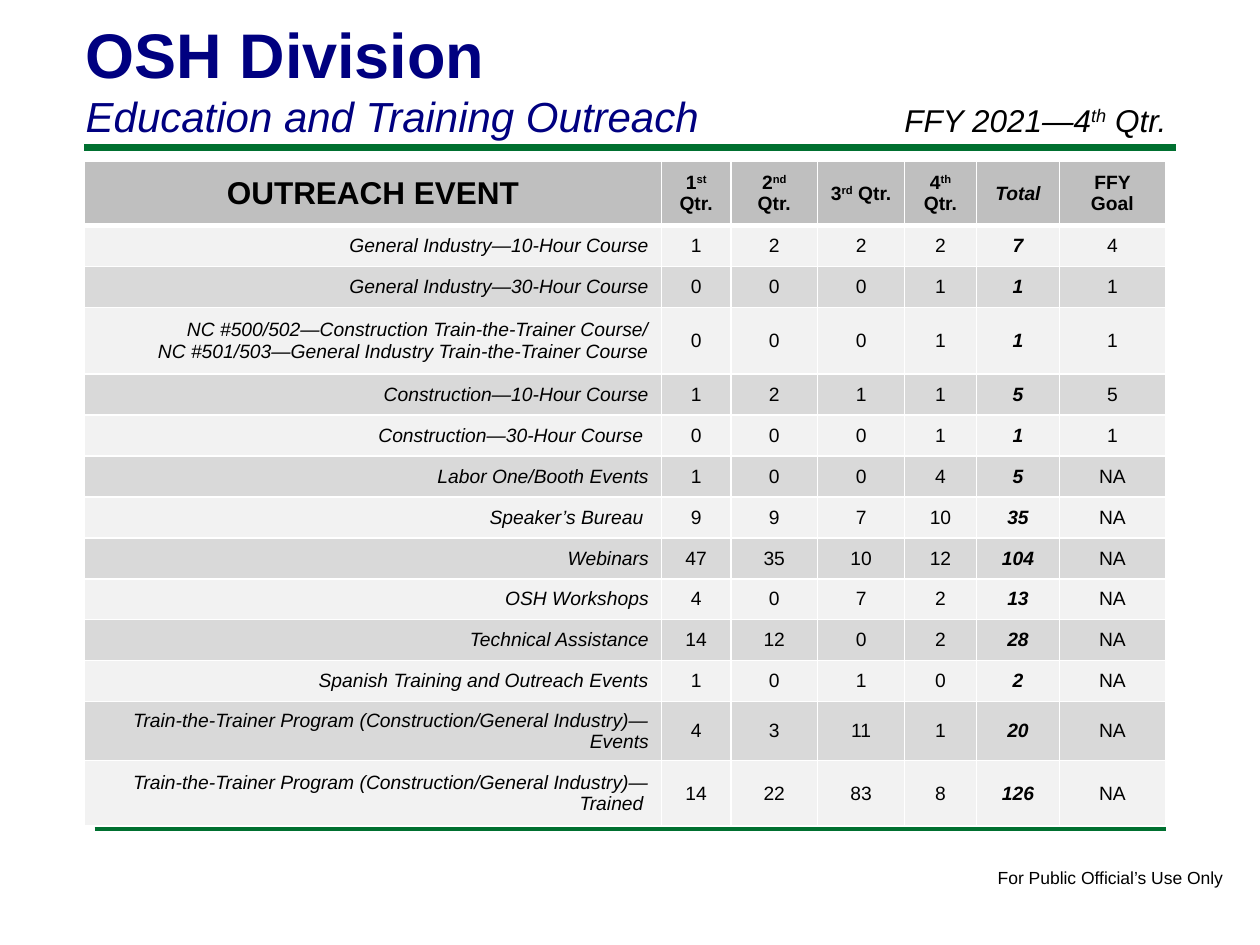
from lxml import etree
from pptx import Presentation, util as u
from pptx.dml.color import RGBColor
from pptx.enum import shapes, text
from pptx.oxml import ns

COLORS = {"navy": "000080", "green": "007030", "black": "000000", "white": "FFFFFF",
          "header": "BFBFBF", "light": "F2F2F2", "dark": "D9D9D9"}


def add_run(paragraph, words, size, color="black", bold=False, italic=False, raised=False):
    run = paragraph.add_run()
    run.text = words
    font = run.font
    font.name, font.size, font.bold, font.italic = "Arial", u.Pt(size), bold, italic
    font.color.rgb = RGBColor.from_string(COLORS[color])
    if raised:
        run._r.get_or_add_rPr().set("baseline", "30000")


def set_borders(cell, widths):
    properties = cell._tc.get_or_add_tcPr()
    for position, (side, width) in enumerate(widths.items()):
        line = etree.Element(ns.qn(f"a:ln{side}"), w=str(u.Pt(width)))
        fill = etree.SubElement(line, ns.qn("a:solidFill"))
        etree.SubElement(fill, ns.qn("a:srgbClr"), val=COLORS["white"])
        properties.insert(position, line)


presentation = Presentation()
presentation.slide_width, presentation.slide_height = u.Inches(10), u.Inches(7.5)
slide = presentation.slides.add_slide(presentation.slide_layouts[5])

for left, right, y, width in [(0.67, 9.33, 1.17, 4), (0.75, 9.25, 6.58, 2)]:
    rule = slide.shapes.add_connector(shapes.MSO_CONNECTOR.STRAIGHT, u.Inches(left),
                                      u.Inches(y), u.Inches(right), u.Inches(y))
    rule.line.color.rgb = RGBColor.from_string(COLORS["green"])
    rule.line.width = u.Pt(width)
    etree.SubElement(rule._element.spPr, ns.qn("a:effectLst"))

title = slide.shapes.title
title.left, title.top = u.Inches(0.58), u.Inches(0.06)
title.width, title.height = u.Inches(8.25), u.Inches(1.11)
title_frame = title.text_frame
title_frame.auto_size = text.MSO_AUTO_SIZE.NONE
title_frame.vertical_anchor = text.MSO_ANCHOR.BOTTOM
heading, subheading = title_frame.paragraphs[0], title_frame.add_paragraph()
heading.alignment = subheading.alignment = text.PP_ALIGN.LEFT
add_run(heading, "OSH Division", 36, "navy", bold=True)
add_run(subheading, "Education and Training Outreach", 24, "navy", italic=True)

period = slide.shapes.add_textbox(u.Inches(7.08), u.Inches(0.75), u.Inches(2.5), u.Inches(0.4))
period.text_frame.word_wrap = True
paragraph = period.text_frame.paragraphs[0]
add_run(paragraph, "FFY 2021—4", 18, italic=True)
add_run(paragraph, "th", 18, italic=True, raised=True)
add_run(paragraph, " Qtr.", 18, italic=True)

footer = slide.shapes.add_textbox(u.Inches(7.82), u.Inches(6.83), u.Inches(2.01), u.Inches(0.27))
footer.text_frame.word_wrap = False
add_run(footer.text_frame.paragraphs[0], "For Public Official’s Use Only", 10)

headers = [["OUTREACH EVENT"], ["1", "st", " Qtr."], ["2", "nd", " Qtr."], ["3", "rd", " Qtr."],
           ["4", "th", " Qtr."], ["Total"], ["FFY Goal"]]
events = [
    ("General Industry—10-Hour Course", 1, 2, 2, 2, 7, 4),
    ("General Industry—30-Hour Course", 0, 0, 0, 1, 1, 1),
    ("NC #500/502—Construction Train-the-Trainer Course/\n"
     "NC #501/503—General Industry Train-the-Trainer Course", 0, 0, 0, 1, 1, 1),
    ("Construction—10-Hour Course", 1, 2, 1, 1, 5, 5),
    ("Construction—30-Hour Course ", 0, 0, 0, 1, 1, 1),
    ("Labor One/Booth Events", 1, 0, 0, 4, 5, "NA"),
    ("Speaker’s Bureau ", 9, 9, 7, 10, 35, "NA"),
    ("Webinars", 47, 35, 10, 12, 104, "NA"),
    ("OSH Workshops", 4, 0, 7, 2, 13, "NA"),
    ("Technical Assistance", 14, 12, 0, 2, 28, "NA"),
    ("Spanish Training and Outreach Events", 1, 0, 1, 0, 2, "NA"),
    ("Train-the-Trainer Program (Construction/General Industry)—Events", 4, 3, 11, 1, 20, "NA"),
    ("Train-the-Trainer Program (Construction/General Industry)—Trained ",
     14, 22, 83, 8, 126, "NA"),
]
column_widths = [4.58, 0.55, 0.69, 0.69, 0.57, 0.66, 0.84]
table_height = 5.28
tall_rows = {0: 0.51, 3: 0.53, 12: 0.47, 13: 0.52}
row_count = len(events) + 1
plain_height = (table_height - sum(tall_rows.values())) / (row_count - len(tall_rows))
total_column = 5

table = slide.shapes.add_table(row_count, len(headers), u.Inches(0.67), u.Inches(1.28),
                               u.Inches(sum(column_widths)), u.Inches(table_height)).table
for column, width in zip(table.columns, column_widths):
    column.width = u.Inches(width)
for index, row in enumerate(table.rows):
    row.height = u.Inches(tall_rows.get(index, plain_height))

for row, values in enumerate([headers, *events]):
    for column, value in enumerate(values):
        cell = table.cell(row, column)
        cell.vertical_anchor = text.MSO_ANCHOR.MIDDLE
        fill = "header" if row == 0 else "light" if row % 2 else "dark"
        cell.fill.solid()
        cell.fill.fore_color.rgb = RGBColor.from_string(COLORS[fill])
        set_borders(cell, {"L": 1, "R": 1, "T": 3 if row == 1 else 1, "B": 3 if row == 0 else 1})
        is_total = column == total_column
        if row == 0:
            paragraph = cell.text_frame.paragraphs[0]
            paragraph.alignment = text.PP_ALIGN.CENTER
            for part, words in enumerate(value):
                add_run(paragraph, words, 11 if column else 18, bold=True,
                        italic=is_total, raised=part == 1)
            continue
        for number, words in enumerate(str(value).split("\n")):
            frame = cell.text_frame
            paragraph = frame.add_paragraph() if number else frame.paragraphs[0]
            paragraph.alignment = text.PP_ALIGN.CENTER if column else text.PP_ALIGN.RIGHT
            add_run(paragraph, words, 11, bold=is_total, italic=is_total or column == 0)

presentation.save("out.pptx")
